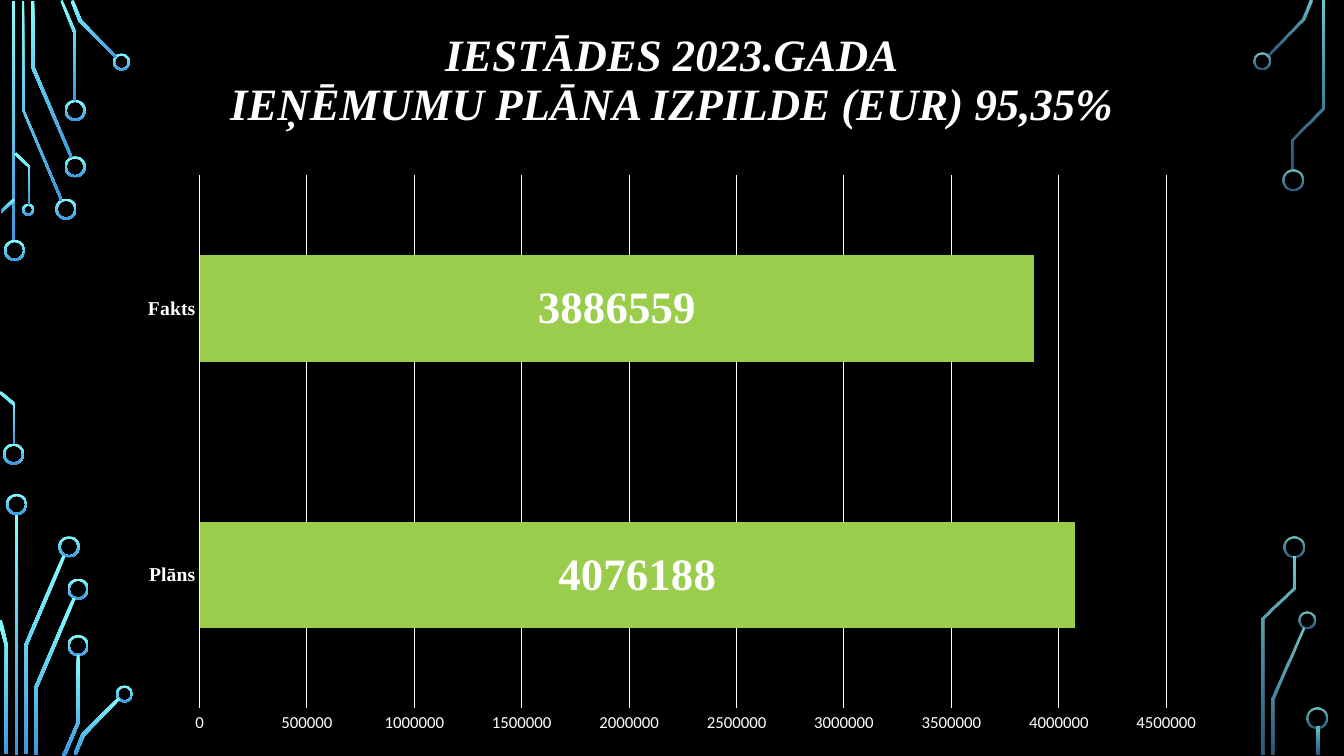
from lxml import etree
from pptx import Presentation
from pptx import util as u
from pptx.chart import data as chart_data
from pptx.dml.color import RGBColor
from pptx.enum import chart as ce, shapes, text
from pptx.oxml.ns import qn

PX = 9144
BLACK = RGBColor(0x00, 0x00, 0x00)
WHITE = RGBColor(0xFF, 0xFF, 0xFF)
GREEN = RGBColor(0x9A, 0xCD, 0x4C)
CYAN = RGBColor(0x82, 0xFF, 0xFF)
BLUE = RGBColor(0x3D, 0x97, 0xDE)
SERIF = "Times New Roman"
SANS = "Calibri"
RING_WIDTH = 2

TITLE_LINES = ["IESTĀDES 2023.GADA", "IEŅĒMUMU PLĀNA IZPILDE (EUR) 95,35%"]
REVENUE = {"Plāns": 4076188, "Fakts": 3886559}

LEFT_CIRCUIT = {
    "opacity": (100, 100),
    "bars": [(12, 1, 3, 239), (15, 510, 3, 239)],
    "rings": [(4, 238, 21), (3, 440, 21), (55, 197, 21), (64, 155, 21), (64, 99, 21),
              (112, 53, 17), (22, 202, 12), (6, 490, 21), (58, 532, 21), (67, 574, 21),
              (67, 630, 21), (115, 680, 17)],
    "traces": [
        [(60, 199), (22, 109), (22, 1), (24, 1), (24, 109), (62, 198)],
        [(70, 157), (31, 67), (31, 1), (34, 1), (34, 66), (72, 156)],
        [(76, 100), (73, 100), (73, 33), (60, 1), (62, 0), (76, 33)],
        [(115, 58), (78, 21), (70, 1), (73, 0), (81, 20), (116, 56)],
        [(2, 211), (1, 209), (13, 197), (15, 199)],
        [(15, 441), (13, 441), (13, 402), (-1, 390), (1, 388), (15, 400)],
        [(30, 203), (28, 203), (28, 166), (14, 153), (16, 151), (30, 165)],
        [(27, 748), (24, 748), (24, 640), (62, 551), (65, 552), (27, 641)],
        [(8, 748), (5, 748), (5, 641), (-2, 616), (2, 615), (8, 641)],
        [(37, 749), (34, 749), (34, 682), (72, 593), (75, 594), (37, 683)],
        [(65, 750), (62, 749), (76, 717), (76, 650), (79, 650), (79, 717)],
        [(76, 749), (73, 748), (81, 728), (117, 692), (119, 694), (84, 730)],
    ],
}
RIGHT_CIRCUIT = {
    "opacity": (80, 60),
    "bars": [(1306, 721, 3, 28)],
    "rings": [(1243, 52, 17), (1272, 168, 21), (1288, 607, 17), (1273, 532, 21),
              (1296, 702, 21)],
    "traces": [
        [(1258, 56), (1256, 55), (1291, 19), (1299, 0), (1302, 1), (1294, 20)],
        [(1264, 749), (1261, 749), (1261, 693), (1292, 623), (1294, 624), (1264, 694)],
        [(1283, 169), (1281, 169), (1281, 138), (1311, 107), (1311, 1), (1314, 1),
         (1314, 108), (1283, 139)],
        [(1254, 749), (1251, 749), (1251, 613), (1282, 583), (1282, 552), (1285, 552),
         (1285, 584), (1254, 614)],
    ],
}


def box(*lengths):
    return [u.Emu(length * PX) for length in lengths]


def set_format(target, **values):
    for name, value in values.items():
        setattr(target, name, value)


def set_font(font, color=WHITE, **values):
    set_format(font, **values)
    font.color.rgb = color


def paint_gradient(part, opacity):
    part.shadow.inherit = False
    part.line.fill.background()
    part.fill.gradient()
    part.fill.gradient_angle = 270
    for stop, color in zip(part.fill.gradient_stops, (CYAN, BLUE)):
        stop.color.rgb = color
    if opacity != (100, 100):
        for rgb, percent in zip(part.fill._xPr.iter(qn("a:srgbClr")), opacity):
            etree.SubElement(rgb, qn("a:alpha")).set("val", str(percent * 1000))


def add_ring(slide, left, top, size):
    ring = slide.shapes.add_shape(shapes.MSO_SHAPE.DONUT, *box(left, top, size, size))
    ring.adjustments[0] = RING_WIDTH / size
    return ring


def add_trace(slide, corners):
    outline = slide.shapes.build_freeform(*corners[0], scale=PX)
    outline.add_line_segments(corners[1:], close=True)
    return outline.convert_to_shape()


def add_circuit(slide, opacity, bars, rings, traces):
    parts = [slide.shapes.add_shape(shapes.MSO_SHAPE.RECTANGLE, *box(*bar)) for bar in bars]
    parts += [add_ring(slide, *ring) for ring in rings]
    parts += [add_trace(slide, corners) for corners in traces]
    for part in parts:
        paint_gradient(part, opacity)


def add_title(slide):
    frame = slide.shapes.add_textbox(*box(125, 0, 1083, 162)).text_frame
    set_format(frame, word_wrap=True, vertical_anchor=text.MSO_ANCHOR.MIDDLE)
    heading = frame.paragraphs[0]
    set_format(heading, text="\v".join(TITLE_LINES), alignment=text.PP_ALIGN.CENTER,
               line_spacing=0.9)
    for run in heading.runs:
        set_font(run.font, name=SERIF, size=u.Pt(32), bold=True, italic=True)


def add_revenue_chart(slide):
    revenue = chart_data.CategoryChartData()
    revenue.categories = list(REVENUE)
    revenue.add_series("Series 1", list(REVENUE.values()))
    chart = slide.shapes.add_chart(ce.XL_CHART_TYPE.BAR_STACKED,
                                   *box(125, 162, 1083, 576), revenue).chart
    set_format(chart, has_legend=False, has_title=False)
    set_font(chart.font, name=SANS, size=u.Pt(10))

    plot = chart.plots[0]
    set_format(plot, gap_width=150, overlap=100, vary_by_categories=False)
    bars = plot.series[0]
    bars.format.fill.solid()
    bars.format.fill.fore_color.rgb = GREEN
    labels = bars.data_labels
    set_format(labels, show_value=True, position=ce.XL_LABEL_POSITION.CENTER)
    set_font(labels.font, name=SERIF, size=u.Pt(32), bold=True)

    amounts = chart.value_axis
    for axis in (chart.category_axis, amounts):
        set_format(axis, major_tick_mark=ce.XL_TICK_MARK.NONE,
                   minor_tick_mark=ce.XL_TICK_MARK.NONE)
        axis.format.line.fill.background()
    set_font(chart.category_axis.tick_labels.font, name=SERIF, size=u.Pt(14), bold=True)
    set_font(amounts.tick_labels.font, name=SANS, size=u.Pt(12), bold=False)
    set_format(amounts, minimum_scale=0, has_major_gridlines=True)
    gridline = amounts.major_gridlines.format.line
    gridline.width = u.Pt(0.75)
    gridline.color.rgb = WHITE


def main():
    deck = Presentation()
    deck.slide_width, deck.slide_height = box(1333, 750)
    slide = deck.slides.add_slide(deck.slide_layouts[6])
    slide.background.fill.solid()
    slide.background.fill.fore_color.rgb = BLACK
    for circuit in (LEFT_CIRCUIT, RIGHT_CIRCUIT):
        add_circuit(slide, **circuit)
    add_title(slide)
    add_revenue_chart(slide)
    deck.save("out.pptx")


if __name__ == "__main__":
    main()
